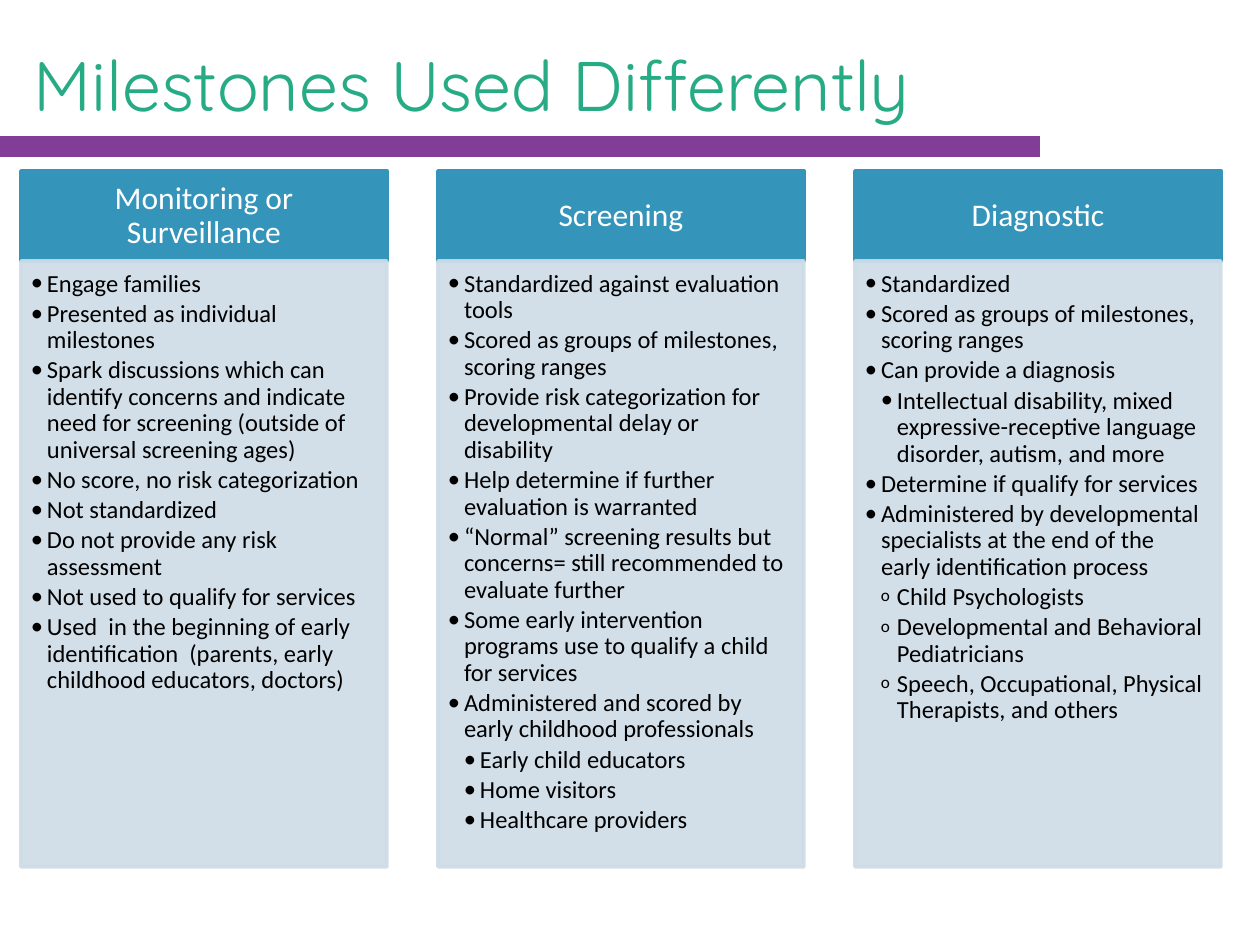
from dataclasses import dataclass

from lxml.etree import SubElement
from pptx import Presentation
from pptx.dml.color import RGBColor
from pptx.enum.shapes import MSO_SHAPE as Shape
from pptx.enum.text import MSO_ANCHOR as Anchor, PP_ALIGN as Align
from pptx.oxml.ns import qn
from pptx.util import Emu, Pt

PX_PER_INCH = 126


@dataclass(frozen=True)
class Theme:
    title_color: str = "26AB84"
    bar: str = "823D97"
    header: str = "3494BA"
    panel: str = "CEDCE7"
    light: str = "FFFFFF"
    dark: str = "000000"
    title_font: str = "Quicksand"
    body_font: str = "Calibri"
    title_size: int = 40
    header_size: int = 18
    body_size: int = 14
    panel_opacity: int = 90


THEME = Theme()

# Column grid
COLUMN_LEFT, COLUMN_PITCH, COLUMN_WIDTH = 21, 417, 366
HEADER_TOP, HEADER_HEIGHT, PANEL_HEIGHT = 171, 90, 606
BULLET_INDENT = 16

# Marker levels: (level, character, size in percent)
MAIN = (1, "•", 100)
SUB = (2, "•", 100)
ROLE = (2, "o", 70)

COLUMNS = [
    ("Monitoring or Surveillance", [
        (MAIN, "Engage families"),
        (MAIN, "Presented as individual milestones"),
        (MAIN, "Spark discussions which can identify concerns and indicate "
               "need for screening (outside of universal screening ages)"),
        (MAIN, "No score, no risk categorization"),
        (MAIN, "Not standardized"),
        (MAIN, "Do not provide any risk assessment"),
        (MAIN, "Not used to qualify for services"),
        (MAIN, "Used  in the beginning of early identification  "
               "(parents, early childhood educators, doctors)"),
    ]),
    ("Screening", [
        (MAIN, "Standardized against evaluation tools"),
        (MAIN, "Scored as groups of milestones, scoring ranges"),
        (MAIN, "Provide risk categorization for developmental delay or disability"),
        (MAIN, "Help determine if further evaluation is warranted"),
        (MAIN, "“Normal” screening results but concerns= still recommended "
               "to evaluate further"),
        (MAIN, "Some early intervention programs use to qualify a child for services"),
        (MAIN, "Administered and scored by early childhood professionals"),
        (SUB, "Early child educators"),
        (SUB, "Home visitors"),
        (SUB, "Healthcare providers"),
    ]),
    ("Diagnostic", [
        (MAIN, "Standardized"),
        (MAIN, "Scored as groups of milestones, scoring ranges"),
        (MAIN, "Can provide a diagnosis"),
        (SUB, "Intellectual disability, mixed expressive-receptive language "
              "disorder, autism, and more"),
        (MAIN, "Determine if qualify for services"),
        (MAIN, "Administered by developmental specialists at the end of the "
               "early identification process"),
        (ROLE, "Child Psychologists"),
        (ROLE, "Developmental and Behavioral Pediatricians"),
        (ROLE, "Speech, Occupational, Physical Therapists, and others"),
    ]),
]


def px(value):
    return Emu(round(value * 914400 / PX_PER_INCH))


def set_opacity(color_format, percent):
    color = color_format._xFill.find(qn("a:srgbClr"))
    SubElement(color, qn("a:alpha"), val=str(percent * 1000))


def add_box(slide, left, top, width, height, color, outlined=True, opacity=100):
    shape = slide.shapes.add_shape(
        Shape.RECTANGLE, px(left), px(top), px(width), px(height))
    shape.shadow.inherit = False
    fills = [shape.fill]
    if outlined:
        shape.line.width = Pt(2)
        fills.append(shape.line.fill)
    else:
        shape.line.fill.background()
    for fill in fills:
        fill.solid()
        fill.fore_color.rgb = RGBColor.from_string(color)
        if opacity < 100:
            set_opacity(fill.fore_color, opacity)
    return shape


def set_frame(shape, anchor, insets):
    frame = shape.text_frame
    frame.word_wrap = True
    frame.vertical_anchor = anchor
    (frame.margin_left, frame.margin_top,
     frame.margin_right, frame.margin_bottom) = map(px, insets)
    return frame


def add_marker(paragraph, marker):
    level, character, percent = marker
    paragraph.level = level
    properties = paragraph._p.get_or_add_pPr()
    properties.set("marL", str(px(BULLET_INDENT * level)))
    properties.set("indent", str(-px(BULLET_INDENT)))
    SubElement(properties, qn("a:buSzPct"), val=str(percent * 1000))
    SubElement(properties, qn("a:buFont"), typeface=THEME.body_font)
    SubElement(properties, qn("a:buChar"), char=character)


def write(paragraph, text, *, size, color, font=THEME.body_font,
          align=Align.LEFT, marker=None, space_after=0):
    if marker:
        add_marker(paragraph, marker)
    paragraph.alignment = align
    paragraph.line_spacing = 0.9
    paragraph.space_before = Pt(0)
    paragraph.space_after = Pt(space_after)
    run = paragraph.add_run()
    run.text = text
    run.font.size = Pt(size)
    run.font.name = font
    run.font.color.rgb = RGBColor.from_string(color)


def add_title(slide, text):
    title = slide.shapes.title
    title.left, title.top, title.width, title.height = map(px, (21, 42, 1239, 94))
    frame = set_frame(title, Anchor.MIDDLE, (13, 6, 13, 6))
    write(frame.paragraphs[0], text, size=THEME.title_size,
          color=THEME.title_color, font=THEME.title_font)


def add_column(slide, left, heading, items):
    # Heading
    header = add_box(slide, left, HEADER_TOP, COLUMN_WIDTH, HEADER_HEIGHT, THEME.header)
    frame = set_frame(header, Anchor.MIDDLE, (18, 10, 18, 10))
    write(frame.paragraphs[0], heading, size=THEME.header_size,
          color=THEME.light, align=Align.CENTER)

    # Bulleted panel
    panel = add_box(slide, left, HEADER_TOP + HEADER_HEIGHT, COLUMN_WIDTH,
                    PANEL_HEIGHT, THEME.panel, opacity=THEME.panel_opacity)
    frame = set_frame(panel, Anchor.TOP, (10, 10, 14, 15))
    for index, (marker, text) in enumerate(items):
        paragraph = frame.add_paragraph() if index else frame.paragraphs[0]
        write(paragraph, text, size=THEME.body_size, color=THEME.dark,
              marker=marker, space_after=2.1)


def main():
    presentation = Presentation()
    presentation.slide_width, presentation.slide_height = px(1260), px(945)
    slide = presentation.slides.add_slide(presentation.slide_layouts[5])

    # Title and its underline bar
    add_title(slide, "Milestones Used Differently")
    add_box(slide, 0, 136, 1040, 21, THEME.bar, outlined=False)

    # Three comparison columns
    for index, (heading, items) in enumerate(COLUMNS):
        add_column(slide, COLUMN_LEFT + index * COLUMN_PITCH, heading, items)

    presentation.save("out.pptx")


if __name__ == "__main__":
    main()
